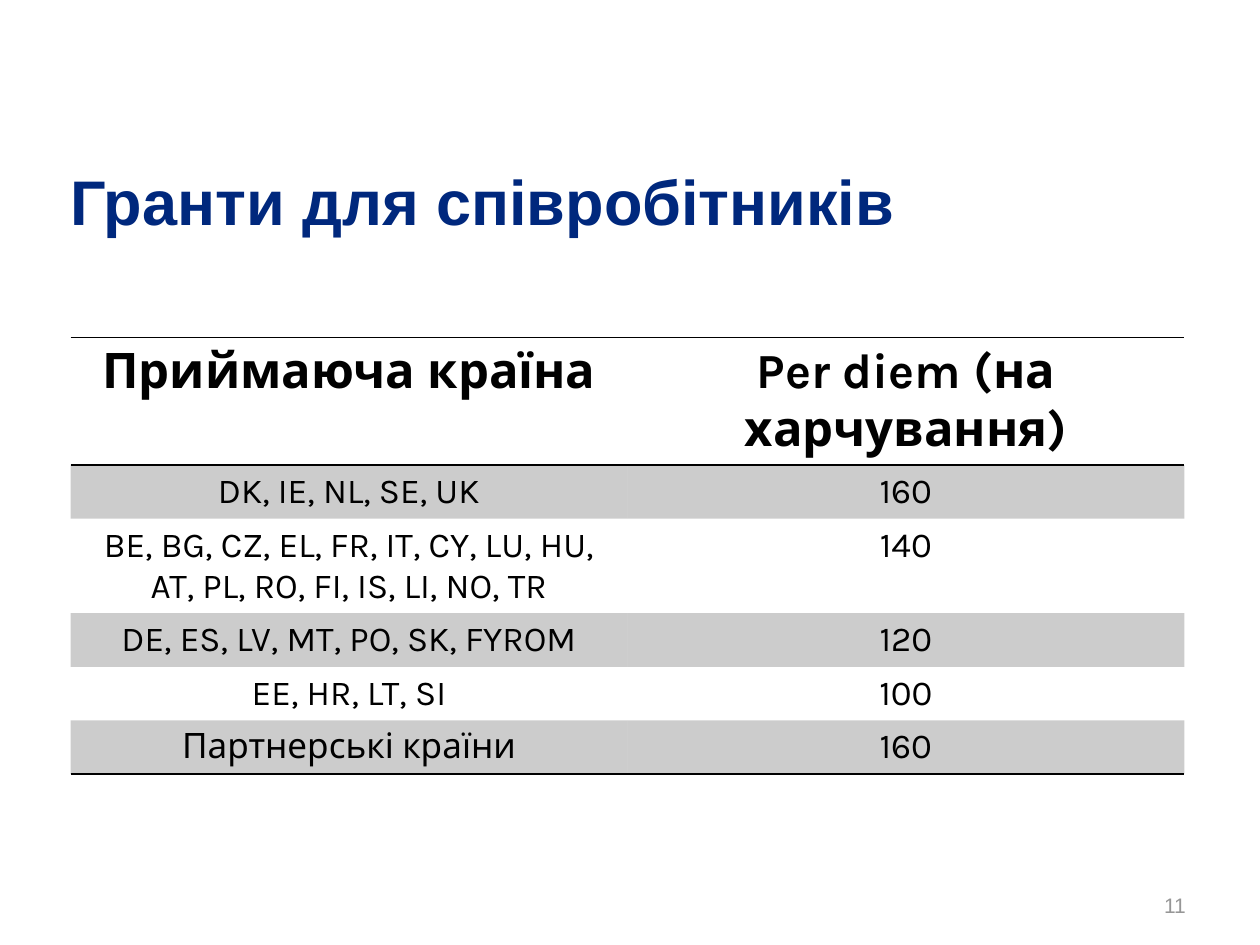
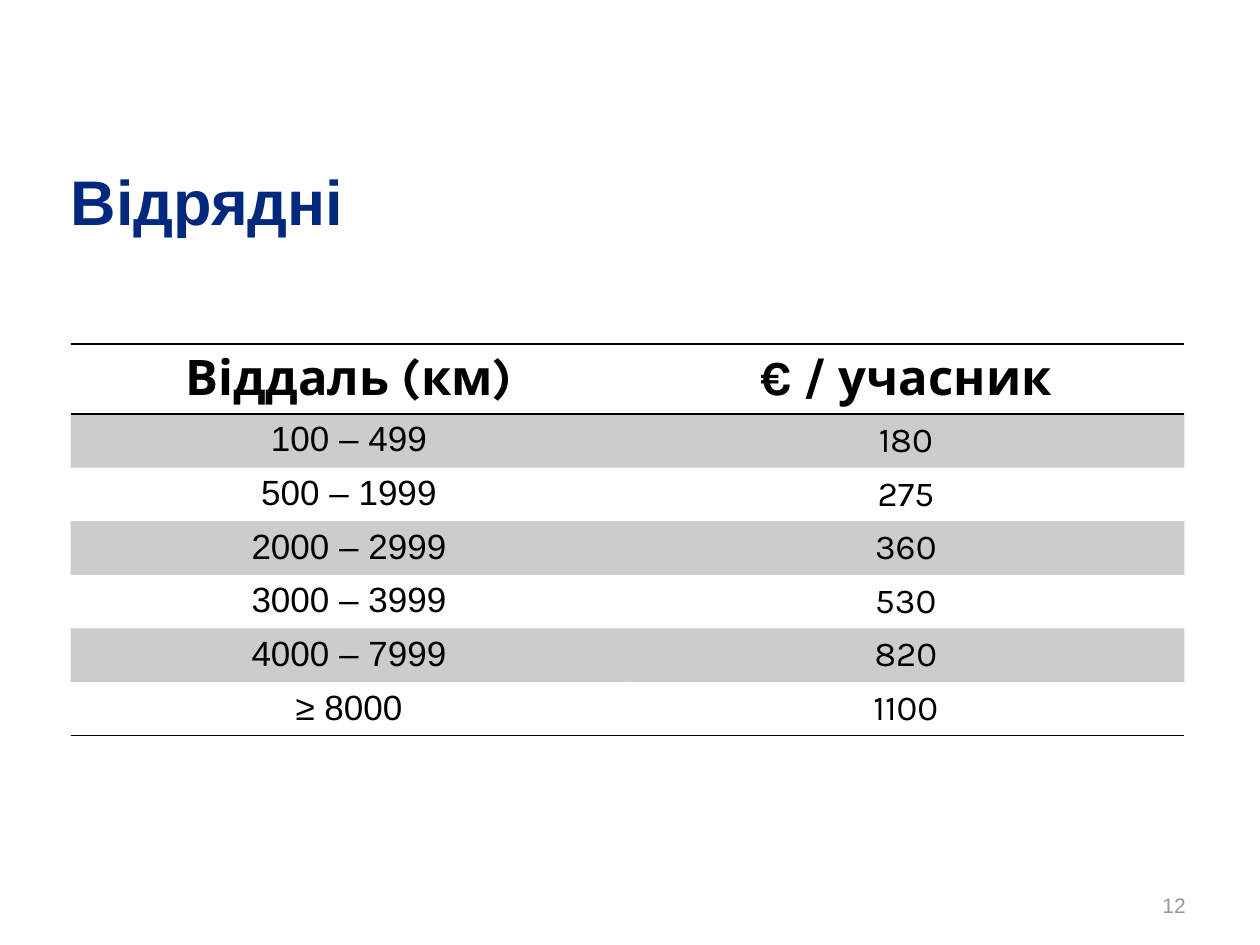
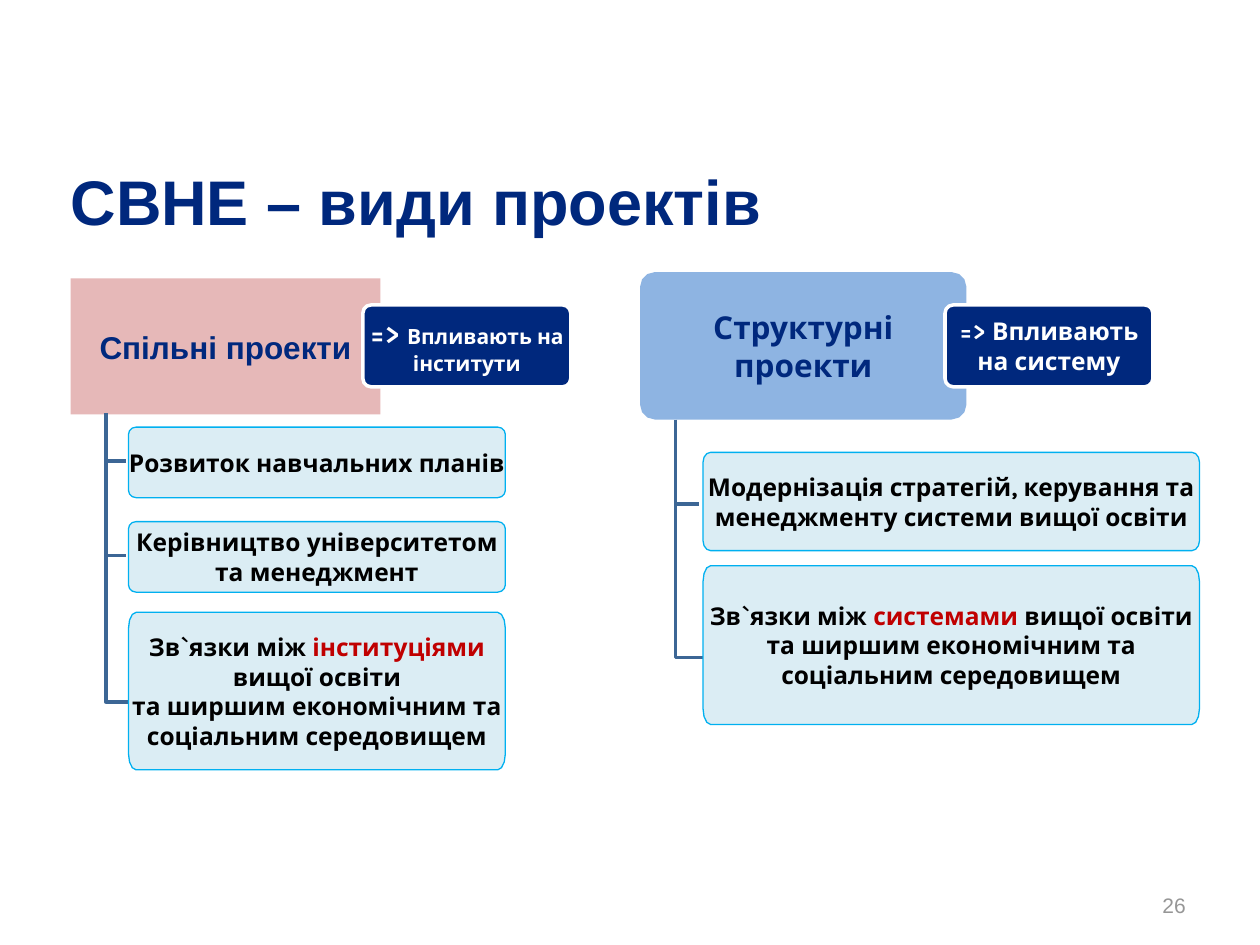
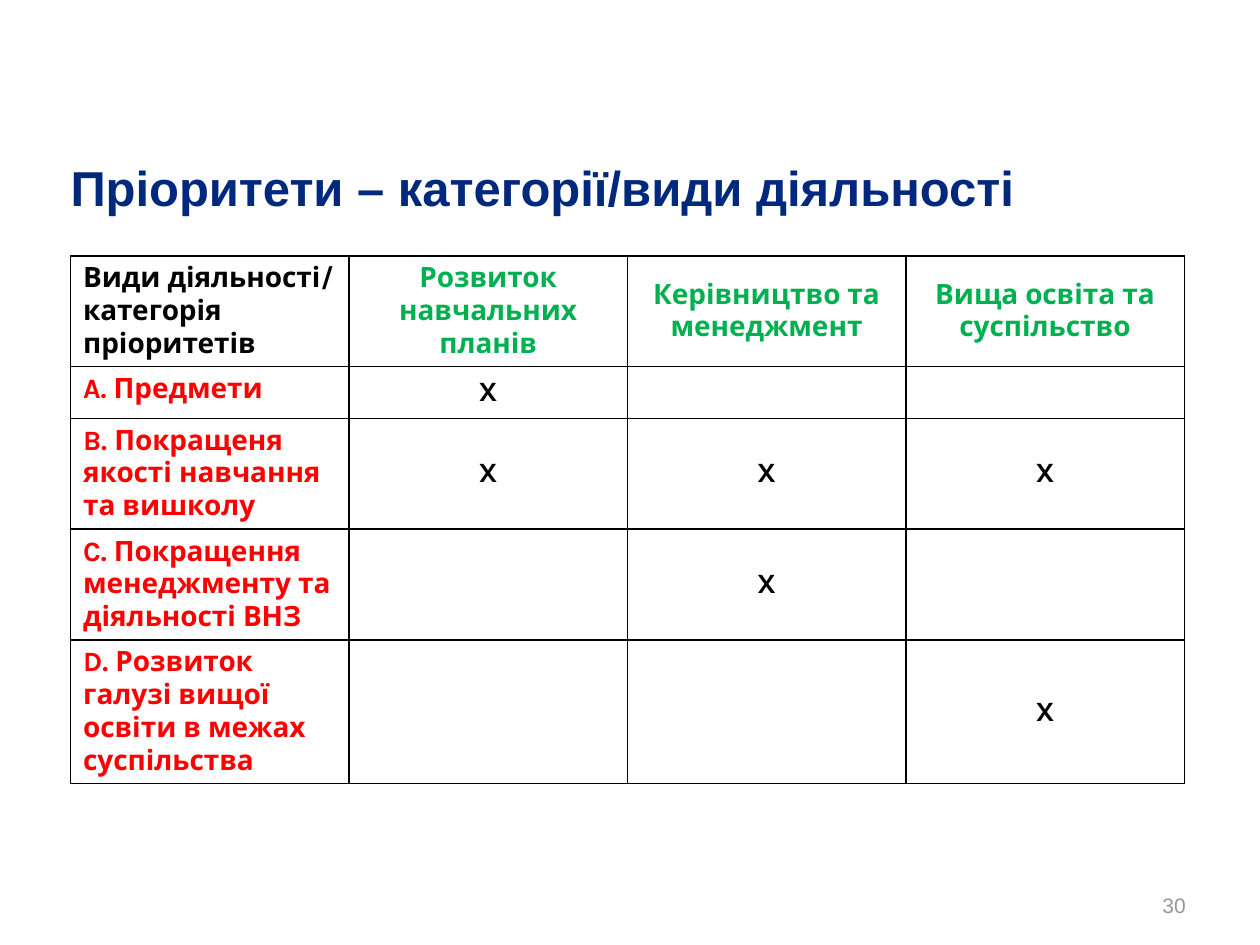
"""Build four slides on staff grants, travel rates, project types and priorities."""
from dataclasses import dataclass
from math import cos, radians, sin

from lxml import etree
from pptx import Presentation
from pptx import util as u
from pptx.dml.color import RGBColor
from pptx.enum import text
from pptx.oxml import ns


@dataclass(frozen=True)
class Theme:
    """Colours, fonts, type sizes and the shared frame of every slide."""
    navy: str = "00287D"
    black: str = "000000"
    white: str = "FFFFFF"
    grey: str = "969696"
    rose: str = "E6B8B8"
    sky: str = "8EB4E2"
    pale: str = "DBEDF4"
    cyan: str = "00B0F0"
    steel: str = "3C6695"
    crimson: str = "C00000"
    red: str = "FF0000"
    green: str = "00B050"
    sans: str = "Arial"
    karla: str = "Karla"
    title_size: int = 36
    head_size: int = 28
    cell_size: int = 20
    group_size: int = 18
    matrix_size: int = 16
    box_size: int = 14
    small_size: int = 12
    left: float = 0.56
    width: float = 8.84
    row: float = 0.41


THEME = Theme()
CENTER, LEFT, RIGHT = text.PP_ALIGN.CENTER, text.PP_ALIGN.LEFT, text.PP_ALIGN.RIGHT
TOP, MIDDLE, BOTTOM = text.MSO_ANCHOR.TOP, text.MSO_ANCHOR.MIDDLE, text.MSO_ANCHOR.BOTTOM
TITLE_ONLY, TITLE_AND_BODY = 5, 1

GRANTS = [
    ("Приймаюча країна", "Per diem (на харчування)"),
    ("DK, IE, NL, SE, UK", "160"),
    ("BE, BG, CZ, EL, FR, IT, CY, LU, HU, AT, PL, RO, FI, IS, LI, NO, TR", "140"),
    ("DE, ES, LV, MT, PO, SK, FYROM", "120"),
    ("EE, HR, LT, SI", "100"),
    ("Партнерські країни", "160"),
]
TRAVEL = [
    ("Віддаль (км)", "€ / учасник"),
    ("100 – 499", "180"),
    ("500 – 1999", "275"),
    ("2000 – 2999", "360"),
    ("3000 – 3999", "530"),
    ("4000 – 7999", "820"),
    ("≥ 8000", "1100"),
]
PRIORITIES = [
    ("Види діяльності/ категорія пріоритетів", "Розвиток навчальних планів",
     "Керівництво та менеджмент", "Вища освіта та суспільство"),
    ("A. Предмети", "X", "", ""),
    ("B. Покращеня якості навчання та вишколу", "X", "X", "X"),
    ("C. Покращення менеджменту та діяльності ВНЗ", "", "X", ""),
    ("D. Розвиток галузі вищої освіти в межах суспільства", "", "", "X"),
]

# A paragraph is a list of spans: (wording, changes to the paragraph's font).
# A box is: top, height, (start, bend) of its elbow line, paragraphs.
JOINT = {
    "badge": (2.88, [("=> ", {"size": THEME.matrix_size}), ("Впливають на інститути", {})],
              THEME.small_size),
    "trunk": 0.84, "reach": 0.16, "left": 1.02, "width": 2.99,
    "boxes": [
        (3.39, 0.56, (3.28, 3.66), [[("Розвиток навчальних планів", {})]]),
        (4.14, 0.56, (4.03, 4.41), [[("Керівництво університетом та менеджмент", {})]]),
        (4.86, 1.25, (3.28, 5.57), [
            [("Зв`язки між ", {}), ("інституціями", {"color": THEME.crimson}),
             (" вищої освіти", {})],
            [("та ширшим економічним та соціальним середовищем", {})]]),
    ],
}
STRUCTURAL = {
    "badge": (7.5, [("=> Впливають на систему", {})], THEME.box_size),
    "trunk": 5.36, "reach": 0.19, "left": 5.58, "width": 3.94,
    "boxes": [
        (3.59, 0.78, (3.36, 4.0), [[("Модернізація стратегій, керування та менеджменту "
                                     "системи вищої освіти", {})]]),
        (4.49, 1.26, (3.33, 5.22), [
            [("Зв`язки між ", {}), ("системами ", {"color": THEME.crimson}),
             ("вищої освіти та ширшим економічним та соціальним середовищем", {})]]),
    ],
}


def set_font(font, size=None, color=None, name=None, bold=None):
    """Apply the given font settings."""
    if size:
        font.size = u.Pt(size)
    if color:
        font.color.rgb = RGBColor.from_string(color)
    if name:
        font.name = name
    if bold is not None:
        font.bold = bold


def write(frame, paragraphs, align=CENTER, **style):
    """Fill a text frame with paragraphs of spans in one shared style."""
    for index, spans in enumerate(paragraphs):
        para = frame.add_paragraph() if index else frame.paragraphs[0]
        para.alignment = align
        set_font(para.font, **style)
        for wording, changes in spans:
            span = para.add_run()
            span.text = wording
            set_font(span.font, **{**style, **changes})


def set_frame(frame, anchor, side=0.0, end=0.0):
    """Wrap and anchor a text frame and set its insets."""
    frame.word_wrap = True
    frame.auto_size = text.MSO_AUTO_SIZE.NONE
    frame.vertical_anchor = anchor
    frame.margin_left = frame.margin_right = u.Inches(side)
    frame.margin_top = frame.margin_bottom = u.Inches(end)


def place(shape, left, top, width, height):
    """Move and size a shape, in inches."""
    shape.left, shape.top = u.Inches(left), u.Inches(top)
    shape.width, shape.height = u.Inches(width), u.Inches(height)


def paint(shape, color):
    """Give a shape or cell a solid fill."""
    shape.fill.solid()
    shape.fill.fore_color.rgb = RGBColor.from_string(color)


def add_page(deck, title, number, layout=TITLE_ONLY, top=1.23, size=THEME.title_size):
    """Add a slide with its title and page number."""
    page = deck.slides.add_slide(deck.slide_layouts[layout])
    heading = page.shapes.title
    place(heading, THEME.left, top, THEME.width, 0.71)
    set_frame(heading.text_frame, BOTTOM, end=0.05)
    write(heading.text_frame, [[(title, {})]], LEFT,
          size=size, color=THEME.navy, name=THEME.sans, bold=True)
    box = page.shapes.add_textbox(*map(u.Inches, (7.5, 6.83, 2.01, 0.5)))
    set_frame(box.text_frame, BOTTOM, side=0.1, end=0.05)
    write(box.text_frame, [[(str(number), {})]], RIGHT,
          size=THEME.small_size, color=THEME.grey, name=THEME.sans)
    return page


def add_borders(cell, sides):
    """Draw one-point black lines on the given sides (letters of LRTB)."""
    properties = cell._tc.get_or_add_tcPr()
    for side in sides:
        line = etree.SubElement(properties, ns.qn("a:ln" + side), w=str(u.Pt(1)))
        fill = etree.SubElement(line, ns.qn("a:solidFill"))
        etree.SubElement(fill, ns.qn("a:srgbClr"), val=THEME.black)


def shade(cell):
    """Fill a cell with black at twenty per cent."""
    paint(cell, THEME.black)
    fill = cell._tc.tcPr.find(ns.qn("a:solidFill"))
    etree.SubElement(fill.find(ns.qn("a:srgbClr")), ns.qn("a:alpha"), val="20000")


def add_grid(page, rows, top, height, style_cell):
    """Add a plain table of equal columns and style each cell by its place."""
    holder = page.shapes.add_table(
        len(rows), len(rows[0]), *map(u.Inches, (THEME.left, top, THEME.width, height)))
    table = holder.table
    table.first_row = table.horz_banding = False
    style_id = table._tbl.tblPr.find(ns.qn("a:tableStyleId"))
    style_id.text = "{2D5ABB26-0587-4C30-8999-92F81FD0307C}"
    for r, row in enumerate(rows):
        table.rows[r].height = u.Inches(THEME.row)
        for c, wording in enumerate(row):
            style_cell(table.cell(r, c), wording, r, c)
    holder.height = u.Inches(height)


def add_rates(page, rows, top, height, key_font):
    """Add a two-column rate table with every other row shaded."""
    def style_cell(cell, wording, r, c):
        head = r == 0
        add_borders(cell, "TB" if head else "B" if r == len(rows) - 1 else "")
        if r % 2:
            shade(cell)
        else:
            cell.fill.background()
        write(cell.text_frame, [[(wording, {})]], color=THEME.black, bold=head,
              size=THEME.head_size if head else THEME.cell_size,
              name=THEME.karla if head or c else key_font)

    add_grid(page, rows, top, height, style_cell)


def style_priority(cell, wording, r, c):
    """Style one cell of the ruled priority matrix."""
    add_borders(cell, "LRTB")
    cell.fill.background()
    cell.vertical_anchor = MIDDLE if c else TOP
    if wording:
        special = bool(r) != bool(c)
        color = (THEME.green if c else THEME.red) if special else THEME.black
        write(cell.text_frame, [[(wording, {})]], CENTER if c else LEFT,
              size=THEME.matrix_size, color=color, name=THEME.karla, bold=True)


def add_outline(page, points, fill=None, line=None, weight=1.0):
    """Draw a filled closed outline, or an open line when there is no fill."""
    points = [(u.Inches(x), u.Inches(y)) for x, y in points]
    builder = page.shapes.build_freeform(*points[0])
    builder.add_line_segments(points[1:], close=bool(fill))
    shape = builder.convert_to_shape()
    shape.shadow.inherit = False
    if fill:
        paint(shape, fill)
    else:
        shape.fill.background()
    if line:
        shape.line.color.rgb = RGBColor.from_string(line)
        shape.line.width = u.Pt(weight)
    else:
        shape.line.fill.background()
    return shape


def add_panel(page, area, paragraphs, fill, color, size, line=None, weight=1.0, across=None):
    """Add a round-cornered panel whose text runs its full width."""
    left, top, width, height = area
    down = height / 10
    across = across or down
    corners = [(left + width - across, top + height - down, 0),
               (left + across, top + height - down, 90),
               (left + across, top + down, 180),
               (left + width - across, top + down, 270)]
    points = [(x + across * cos(radians(start + turn)), y + down * sin(radians(start + turn)))
              for x, y, start in corners for turn in (0, 30, 60, 90)]
    panel = add_outline(page, points, fill, line, weight)
    set_frame(panel.text_frame, MIDDLE)
    write(panel.text_frame, paragraphs, size=size, color=color, name=THEME.karla, bold=True)


def add_branch(page, group):
    """Add a group's badge, its elbow lines and its boxes."""
    left, spans, size = group["badge"]
    add_panel(page, (left, 2.42, 1.65, 0.65), [spans], THEME.navy, THEME.white, size,
              THEME.white, 2)
    trunk = group["trunk"]
    last = len(group["boxes"]) - 1
    for index, (top, height, (start, bend), paragraphs) in enumerate(group["boxes"]):
        end = group["left"] if index == last else trunk + group["reach"]
        add_outline(page, [(trunk, start), (trunk, bend), (end, bend)],
                    line=THEME.steel, weight=2)
        add_panel(page, (group["left"], top, group["width"], height), paragraphs,
                  THEME.pale, THEME.black, THEME.box_size, THEME.cyan, 0.75, across=0.06)


def add_projects(page):
    """Lay out the two kinds of project side by side."""
    body = page.placeholders[1]
    place(body, THEME.left, 2.21, 2.46, 1.08)
    paint(body, THEME.rose)
    set_frame(body.text_frame, MIDDLE)
    para = body.text_frame.paragraphs[0]
    para.space_before = u.Pt(0)
    properties = para._p.get_or_add_pPr()
    properties.set("marL", "0")
    properties.set("indent", "0")
    etree.SubElement(properties, ns.qn("a:buNone"))
    write(body.text_frame, [[("Спільні проекти", {})]], size=THEME.group_size,
          color=THEME.navy, name=THEME.sans, bold=True)
    add_branch(page, JOINT)
    add_panel(page, (5.08, 2.16, 2.59, 1.17), [[("Структурні проекти", {})]],
              THEME.sky, THEME.navy, THEME.group_size)
    add_branch(page, STRUCTURAL)


def main():
    """Build and save the deck."""
    deck = Presentation()
    deck.slide_width, deck.slide_height = u.Inches(10), u.Inches(7.5)
    add_rates(add_page(deck, "Гранти для співробітників", 11), GRANTS, 2.68, 3.53, THEME.karla)
    add_rates(add_page(deck, "Відрядні", 12), TRAVEL, 2.73, 3.17, THEME.sans)
    add_projects(add_page(deck, "CBHE – види проектів", 26, TITLE_AND_BODY))
    page = add_page(deck, "Пріоритети – категорії/види діяльності", 30,
                    top=1.06, size=THEME.head_size)
    add_grid(page, PRIORITIES, 2.03, 4.27, style_priority)
    deck.save("out.pptx")


if __name__ == "__main__":
    main()
